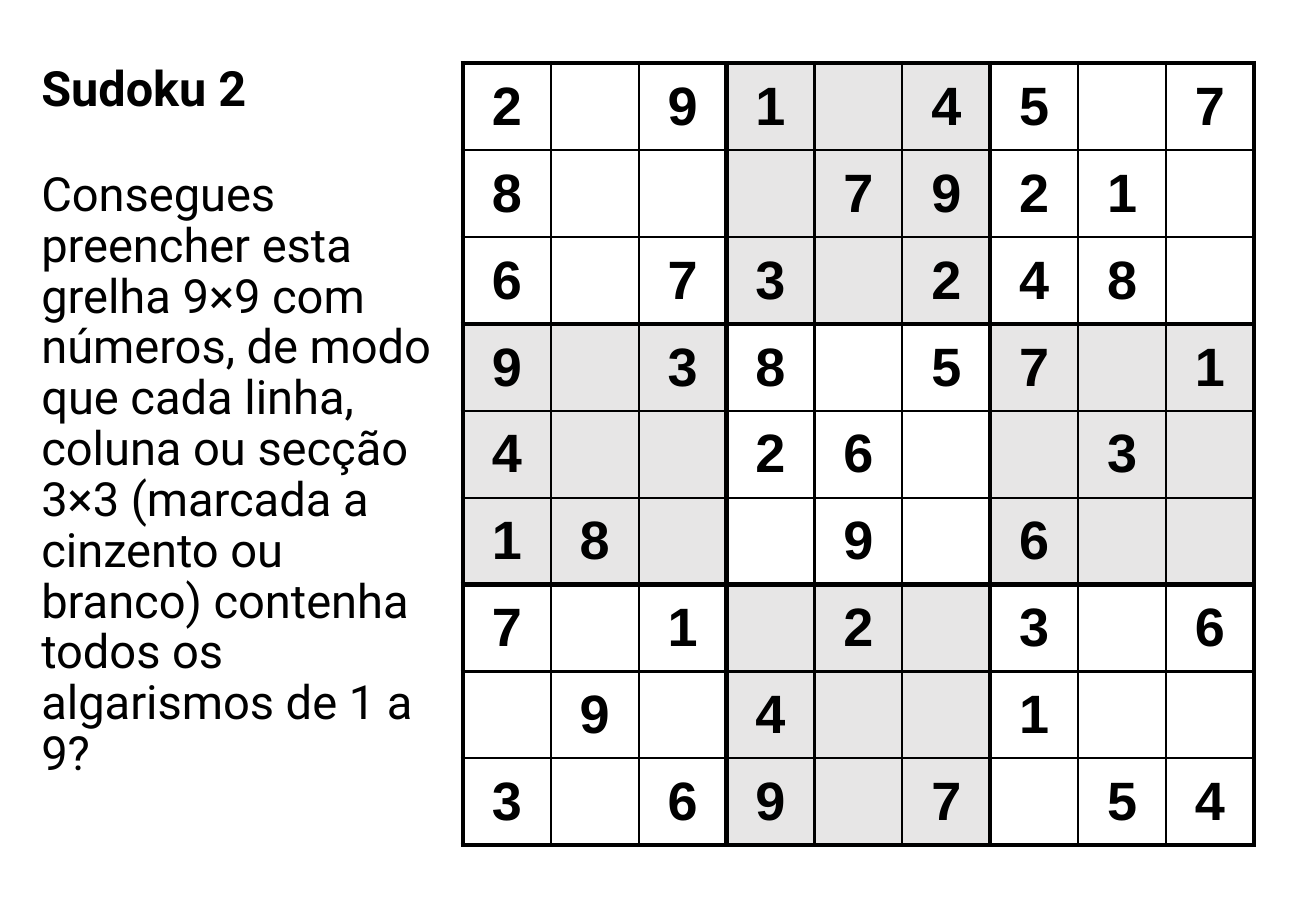
from itertools import product

from lxml import etree
from pptx import Presentation
from pptx import util as u
from pptx.dml.color import RGBColor
from pptx.enum import text
from pptx.oxml.ns import qn

THEME = {
    "ink": "000000", "white": "FFFFFF", "grey": "E7E6E6",
    "heading": {"name": "Roboto", "size": u.Pt(28.8), "bold": True},
    "body": {"name": "Roboto", "size": u.Pt(27.9), "bold": False},
    "digit": {"name": "Arial", "size": u.Pt(32), "bold": True},
    "thick": u.Pt(3), "thin": u.Pt(1.5),
}
HEADING = "Sudoku 2"
INSTRUCTIONS = (
    "Consegues preencher esta grelha 9×9 com números, de modo que cada linha, "
    "coluna ou secção 3×3 (marcada a cinzento ou branco) contenha todos os "
    "algarismos de 1 a 9?"
)
PUZZLE = [
    "2.91.45.7",
    "8...7921.",
    "6.73.248.",
    "9.38.57.1",
    "4..26..3.",
    "18..9.6..",
    "7.1.2.3.6",
    ".9.4..1..",
    "3.69.7.54",
]


def assign(target, values):
    for key, value in values.items():
        setattr(target, key, value)


class SudokuSlide:
    """Hold the theme and the current slide, and draw its elements."""

    def __init__(self, deck, theme):
        self.theme = theme
        self.slide = deck.slides.add_slide(deck.slide_layouts[5])

    def styled_run(self, paragraph, wording, style):
        run = paragraph.add_run()
        run.text = wording
        assign(run.font, self.theme[style])
        run.font.color.rgb = RGBColor.from_string(self.theme["ink"])

    def title(self, heading, instructions, left, top, width, height):
        title = self.slide.shapes.title
        assign(title, {"left": left, "top": top, "width": width, "height": height})
        frame = title.text_frame
        assign(frame, {
            "word_wrap": True, "auto_size": text.MSO_AUTO_SIZE.NONE,
            "vertical_anchor": text.MSO_ANCHOR.TOP,
        })
        lines = [
            (frame.paragraphs[0], heading, "heading", 0),
            (frame.add_paragraph(), instructions, "body", 32),
        ]
        for paragraph, wording, style, gap in lines:
            assign(paragraph, {
                "alignment": text.PP_ALIGN.LEFT, "line_spacing": 0.9,
                "space_before": u.Pt(gap),
            })
            self.styled_run(paragraph, wording, style)

    def border(self, cell, side, weight):
        properties = cell._tc.get_or_add_tcPr()
        line = etree.SubElement(properties, qn(f"a:ln{side}"), w=str(weight))
        fill = etree.SubElement(line, qn("a:solidFill"))
        etree.SubElement(fill, qn("a:srgbClr"), val=self.theme["ink"])

    def grid(self, puzzle, left, top, width, height):
        size = len(puzzle)
        table = self.slide.shapes.add_table(size, size, left, top, width, height).table
        assign(table, {"first_row": False, "horz_banding": False})
        for row, column in product(range(size), repeat=2):
            cell = table.cell(row, column)
            edges = {"L": column, "R": column + 1, "T": row, "B": row + 1}
            for side, edge in edges.items():
                self.border(cell, side, self.theme["thin" if edge % 3 else "thick"])
            shade = "grey" if (row // 3 + column // 3) % 2 else "white"
            cell.fill.solid()
            cell.fill.fore_color.rgb = RGBColor.from_string(self.theme[shade])
            assign(cell, {
                "vertical_anchor": text.MSO_ANCHOR.MIDDLE,
                "margin_left": u.Inches(0.08), "margin_right": u.Inches(0.08),
                "margin_top": u.Inches(0.05), "margin_bottom": u.Inches(0.05),
            })
            digit = puzzle[row][column]
            if digit != ".":
                paragraph = cell.text_frame.paragraphs[0]
                paragraph.alignment = text.PP_ALIGN.CENTER
                self.styled_run(paragraph, digit, "digit")


def main():
    deck = Presentation()
    assign(deck, {"slide_width": u.Inches(10.83), "slide_height": u.Inches(7.5)})
    sudoku = SudokuSlide(deck, THEME)
    sudoku.title(HEADING, INSTRUCTIONS,
                 u.Inches(0.24), u.Inches(0.48), u.Inches(3.44), u.Inches(6.27))
    sudoku.grid(PUZZLE, u.Inches(3.81), u.Inches(0.52), u.Inches(6.51), u.Inches(6.44))
    deck.save("out.pptx")


if __name__ == "__main__":
    main()
